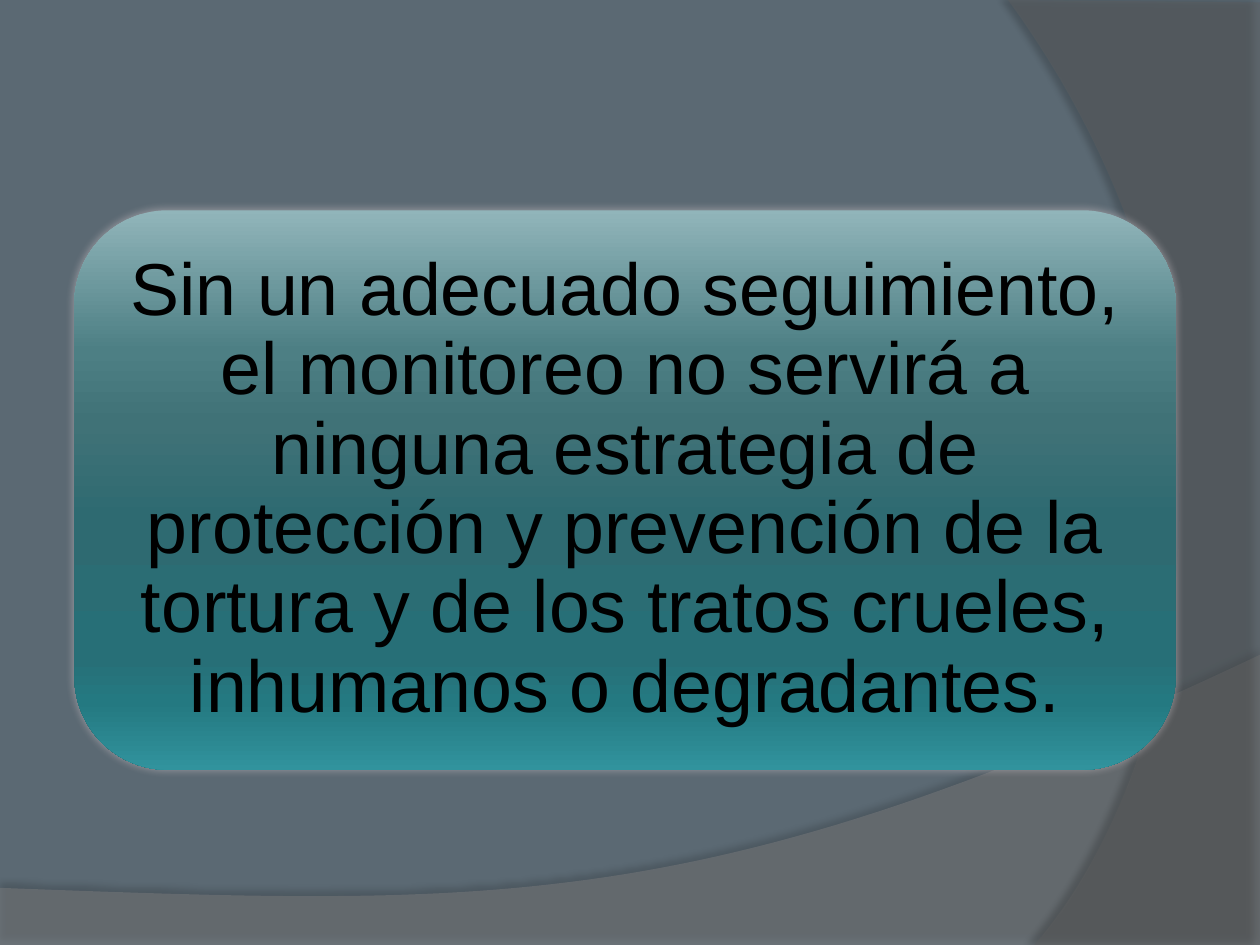
from lxml import etree
from pptx import Presentation
from pptx.dml.color import RGBColor
from pptx.enum import shapes, text
from pptx.oxml.ns import qn
from pptx.util import Cm, Pt

MESSAGE = (
    "Sin un adecuado seguimiento, el monitoreo no servirá a ninguna estrategia de "
    "protección y prevención de la tortura y de los tratos crueles, inhumanos o degradantes."
)
CARD_STOPS = [
    (0, "91B5BA"), (25, "4D7F84"), (38, "407277"), (55, "2E6A71"),
    (80, "276F77"), (88, "247981"), (100, "31939D"),
]
CURVE_STEPS = 60


def color(value):
    return RGBColor.from_string(value)


def set_format(target, values):
    for name, value in values.items():
        setattr(target, name, value)


def add_child(parent, tag, **attributes):
    values = {name: str(value) for name, value in attributes.items()}
    return etree.SubElement(parent, qn(tag), values)


def add_color(parent, value, opacity=100):
    element = add_child(parent, "a:srgbClr", val=value)
    if opacity < 100:
        add_child(element, "a:alpha", val=opacity * 1000)


def set_shadow(shape, value, opacity, blur, distance, angle):
    shape.shadow.inherit = False
    effects = shape._element.spPr.find(qn("a:effectLst"))
    shadow = add_child(
        effects, "a:outerShdw", blurRad=int(Pt(blur)), dist=int(Pt(distance)),
        dir=angle * 60000, algn="ctr", rotWithShape=0,
    )
    add_color(shadow, value, opacity)


def curve_points(start, first, second, end):
    points = []
    for step in range(1, CURVE_STEPS + 1):
        t = step / CURVE_STEPS
        weights = ((1 - t) ** 3, 3 * t * (1 - t) ** 2, 3 * t * t * (1 - t), t ** 3)
        points.append(tuple(
            sum(weight * value for weight, value in zip(weights, axis))
            for axis in zip(start, first, second, end)
        ))
    return points


def add_wave(slide, corners, curve, fill, opacity, shadow):
    points = [
        (Cm(x), Cm(y)) for x, y in corners + curve_points(corners[-1], *curve)
    ]
    builder = slide.shapes.build_freeform(*points[0])
    builder.add_line_segments(points[1:], close=True)
    shape = builder.convert_to_shape()
    shape.fill.solid()
    shape.fill.fore_color.rgb = color(fill)
    fill_color = shape._element.spPr.find(qn("a:solidFill"))[0]
    add_child(fill_color, "a:alpha", val=opacity * 1000)
    shape.line.fill.background()
    set_shadow(shape, *shadow)


def set_gradient(shape, stops, angle):
    shape.fill.gradient()
    gradient = shape._element.spPr.find(qn("a:gradFill"))
    for child in list(gradient):
        gradient.remove(child)
    stop_list = add_child(gradient, "a:gsLst")
    for position, value in stops:
        add_color(add_child(stop_list, "a:gs", pos=position * 1000), value)
    add_child(gradient, "a:lin", ang=angle * 60000, scaled=0)


def add_card(slide, message):
    card = slide.shapes.add_shape(
        shapes.MSO_SHAPE.ROUNDED_RECTANGLE, Cm(1.5), Cm(4.24), Cm(22.2), Cm(11.28)
    )
    set_gradient(card, CARD_STOPS, 90)
    card.line.fill.background()
    set_shadow(card, "B5B0B5", 75, 5, 0, 0)
    frame = card.text_frame
    set_format(frame, {
        "word_wrap": True,
        "vertical_anchor": text.MSO_ANCHOR.MIDDLE,
        **{f"margin_{side}": Cm(0.43) for side in ("left", "top", "right", "bottom")},
    })
    paragraph = frame.paragraphs[0]
    set_format(paragraph, {"alignment": text.PP_ALIGN.CENTER, "line_spacing": 0.9})
    run = paragraph.add_run()
    run.text = message
    set_format(run.font, {"name": "Arial", "size": Pt(42)})
    run.font.color.rgb = color("000000")


def main():
    presentation = Presentation()
    set_format(presentation, {"slide_width": Cm(25.4), "slide_height": Cm(19.05)})
    slide = presentation.slides.add_slide(presentation.slide_layouts[6])
    slide.background.fill.solid()
    slide.background.fill.fore_color.rgb = color("5B6973")
    add_wave(
        slide, [(0, 17.9), (0, 19.07), (25.4, 19.07), (25.4, 13.2)],
        [(14.2, 18.52), (9.93, 18.26), (0, 17.9)],
        "7F7F7F", 45, ("000000", 35, 4, 3.5, 270),
    )
    add_wave(
        slide, [(25.4, 0.05), (25.4, 19.05), (20.85, 19.05)],
        [(23.75, 15.72), (25.86, 7.62), (20.32, 0)],
        "5E5E5E", 40, ("000000", 45, 4, 4, 180),
    )
    add_card(slide, MESSAGE)
    presentation.save("out.pptx")


if __name__ == "__main__":
    main()
